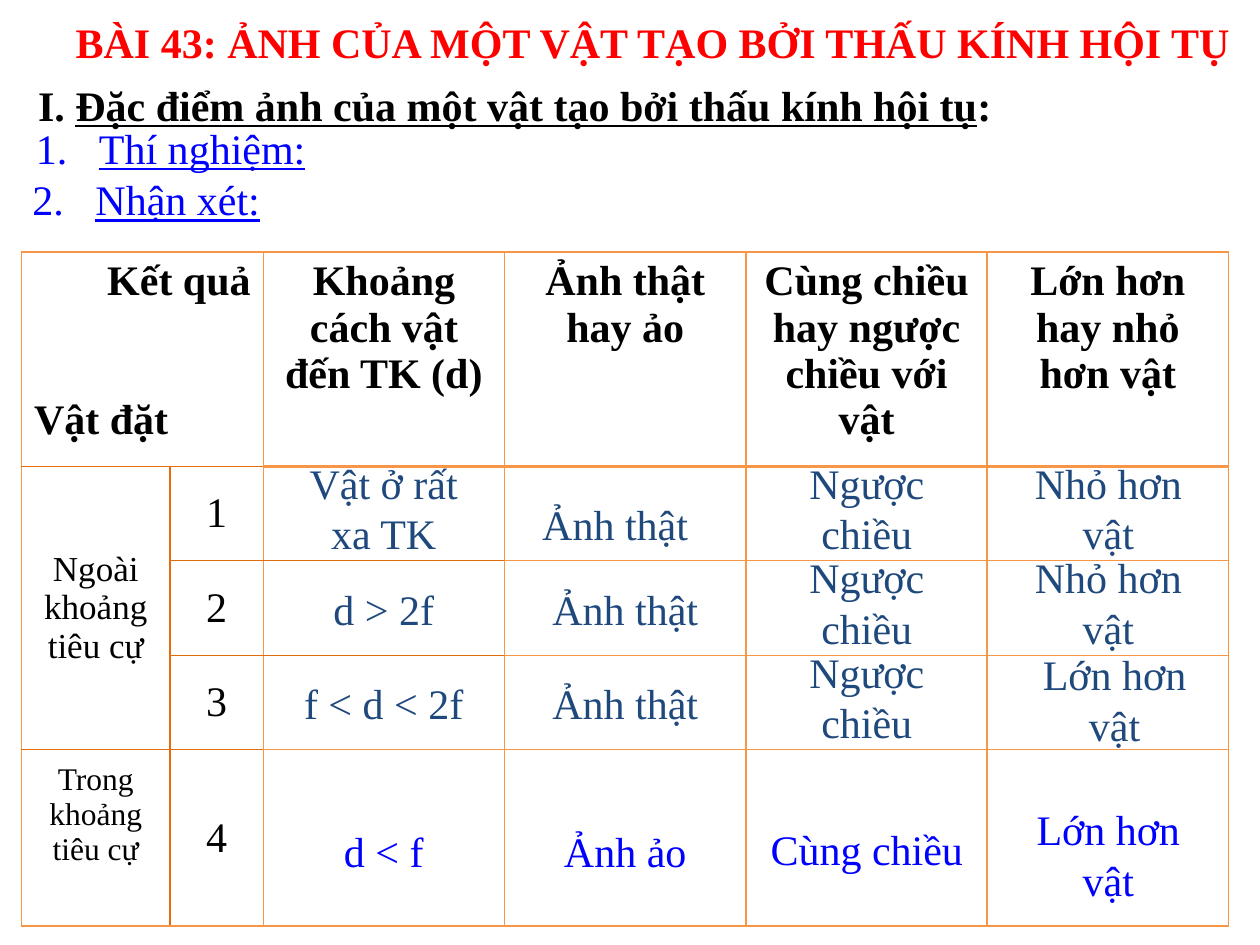
from lxml import etree
from pptx import Presentation, util as u
from pptx.dml.color import RGBColor
from pptx.enum import text
from pptx.oxml import ns

FONT = "Times New Roman"
BLACK, RED, BLUE, NAVY = "000000", "FF0000", "0000FF", "1F497D"
ORANGE, DARK_ORANGE = "F79646", "E46C0A"
LEFT, CENTER, RIGHT = text.PP_ALIGN.LEFT, text.PP_ALIGN.CENTER, text.PP_ALIGN.RIGHT

COLUMN_WIDTHS = [1.18, 0.74] + [1.915] * 4
ROW_HEIGHTS = [1.7, 0.75, 0.75, 0.75, 1.4]
HEADERS = ["Khoảng cách vật đến TK (d)", "Ảnh thật hay ảo",
           "Cùng chiều hay ngược chiều với vật", "Lớn hơn hay nhỏ hơn vật"]
ANSWER_LEFT, ANSWER_STEP, ANSWER_WIDTH = 2.17, 1.917, 1.75
ANSWERS = [
    (3.58, NAVY, [("Vật ở rất xa TK", 0, 0), ("Ảnh thật", -0.08, 0.33),
                  ("Ngược chiều", 0, 0), ("Nhỏ hơn vật", 0, 0)]),
    (4.33, NAVY, [("d > 2f", 0, 0.25), ("Ảnh thật", 0, 0.25),
                  ("Ngược chiều", 0, 0), ("Nhỏ hơn vật", 0, 0)]),
    (5.08, NAVY, [("f < d < 2f", 0, 0.25), ("Ảnh thật", 0, 0.25),
                  ("Ngược chiều", 0, 0), ("Lớn hơn vật", 0.05, 0.02)]),
    (6.33, BLUE, [("d < f", 0, 0.17), ("Ảnh ảo", 0, 0.17),
                  ("Cùng chiều", 0, 0.16), ("Lớn hơn vật", 0, 0)]),
]


def color(value):
    """Turn a hex string into a colour."""
    return RGBColor.from_string(value)


def add_span(para, words, tint=BLACK, size=24, bold=False, underline=False):
    """Append one formatted run to a paragraph."""
    span = para.add_run()
    span.text = words
    font = span.font
    font.name, font.size, font.bold, font.underline = FONT, u.Pt(size), bold, underline
    font.color.rgb = color(tint)


def prepare(box, left, top, width, height, align=CENTER, wrap=False):
    """Place a text shape and return its first paragraph."""
    box.left, box.top, box.width, box.height = map(u.Inches, (left, top, width, height))
    frame = box.text_frame
    frame.word_wrap = wrap
    frame.auto_size = text.MSO_AUTO_SIZE.SHAPE_TO_FIT_TEXT
    frame.vertical_anchor = text.MSO_ANCHOR.TOP
    para = frame.paragraphs[0]
    para.alignment = align
    para.space_before = u.Pt(0)
    return para


def number(para, start):
    """Give a paragraph an automatic number and a hanging indent."""
    properties = para._p.get_or_add_pPr()
    properties.set("marL", str(u.Inches(0.5)))
    properties.set("indent", str(u.Inches(-0.5)))
    face = etree.SubElement(properties, ns.qn("a:buFont"))
    face.set("typeface", FONT)
    bullet = etree.SubElement(properties, ns.qn("a:buAutoNum"))
    bullet.set("type", "arabicPeriod")
    if start > 1:
        bullet.set("startAt", str(start))


def add_headings(page):
    """Fill the title, the section heading and the two numbered items."""
    title, first, second = page.placeholders
    para = prepare(title, 0.5, 0.08, 9.45, 0.5, LEFT)
    add_span(para, "BÀI 43: ẢNH CỦA MỘT VẬT TẠO BỞI THẤU KÍNH HỘI TỤ", RED, bold=True)
    para = prepare(page.shapes.add_textbox(0, 0, 0, 0), 0.2, 0.58, 7.77, 0.5)
    add_span(para, "I. ", bold=True)
    add_span(para, "Đặc điểm ảnh của một vật tạo bởi thấu kính hội tụ", bold=True, underline=True)
    add_span(para, ":", bold=True)
    items = [(first, "Thí nghiệm:", 0.13, 0.92, 2.45), (second, "Nhận xét:", 0.15, 1.33, 2.02)]
    for start, (box, words, left, top, width) in enumerate(items, 1):
        para = prepare(box, left, top, width, 0.51)
        number(para, start)
        add_span(para, words, BLUE, underline=True)


def draw_edge(cell, tag, tint, weight):
    """Draw one border of a cell."""
    line = etree.SubElement(cell._tc.get_or_add_tcPr(), ns.qn(tag), w=str(u.Pt(weight)))
    fill = etree.SubElement(line, ns.qn("a:solidFill"))
    etree.SubElement(fill, ns.qn("a:srgbClr"), val=tint)


def horizontal(line, column):
    """Give colour and weight of a horizontal grid line in a column."""
    dark = (column < 2 and 0 < line < 5) or (column == 2 and line in (2, 3))
    return DARK_ORANGE if dark else ORANGE, 2 if line == 1 and column >= 2 else 1


def vertical(line, row):
    """Give colour and weight of a vertical grid line in a row."""
    return DARK_ORANGE if line == 1 and row > 0 else ORANGE, 1


def style_cell(cell, row, column):
    """Draw the borders of a cell and leave it unfilled."""
    draw_edge(cell, "a:lnL", *vertical(column, row))
    draw_edge(cell, "a:lnR", *vertical(column + 1, row))
    draw_edge(cell, "a:lnT", *horizontal(row, column))
    draw_edge(cell, "a:lnB", *horizontal(row + 1, column))
    cell.fill.background()


def write_cell(cell, words, size=24, bold=False, middle=True):
    """Write centred text into a cell."""
    cell.vertical_anchor = text.MSO_ANCHOR.MIDDLE if middle else text.MSO_ANCHOR.TOP
    para = cell.text_frame.paragraphs[0]
    para.alignment = CENTER
    add_span(para, words, size=size, bold=bold)


def add_results_table(page):
    """Add the ruled table with its headers and row labels."""
    frame = page.shapes.add_table(5, 6, u.Inches(0.17), u.Inches(2),
                                  u.Inches(sum(COLUMN_WIDTHS)), u.Inches(sum(ROW_HEIGHTS)))
    table = frame.table
    table.first_row = table.horz_banding = False
    for column, width in zip(table.columns, COLUMN_WIDTHS):
        column.width = u.Inches(width)
    for row, height in zip(table.rows, ROW_HEIGHTS):
        row.height = u.Inches(height)
    corner, outside, inside = table.cell(0, 0), table.cell(1, 0), table.cell(4, 0)
    corner.merge(table.cell(0, 1))
    outside.merge(table.cell(3, 0))
    for row in range(5):
        for column in range(6):
            cell = table.cell(row, column)
            if not cell.is_spanned:
                style_cell(cell, row, column)
    para = corner.text_frame.paragraphs[0]
    para.alignment = RIGHT
    add_span(para, "Kết quả", bold=True)
    para = corner.text_frame.add_paragraph()
    para.alignment, para.space_before = LEFT, u.Pt(53)
    add_span(para, "Vật đặt", bold=True)
    for column, words in enumerate(HEADERS, 2):
        write_cell(table.cell(0, column), words, bold=True, middle=False)
    for row in range(1, 5):
        write_cell(table.cell(row, 1), str(row))
    write_cell(outside, "Ngoài khoảng tiêu cự", size=20)
    write_cell(inside, "Trong khoảng tiêu cự", size=18)
    inside.margin_bottom = u.Inches(0.42)


def add_answers(page):
    """Lay the answers over the empty cells of the table."""
    for top, tint, answers in ANSWERS:
        for column, (words, shift, drop) in enumerate(answers):
            left = ANSWER_LEFT + column * ANSWER_STEP + shift
            height = 0.51 if drop > 0.1 else 0.91
            box = page.shapes.add_textbox(0, 0, 0, 0)
            para = prepare(box, left, top + drop, ANSWER_WIDTH, height, wrap=True)
            add_span(para, words, tint)


def main():
    """Build the lesson slide and save it."""
    deck = Presentation()
    deck.slide_width, deck.slide_height = u.Inches(10), u.Inches(7.5)
    page = deck.slides.add_slide(deck.slide_layouts[3])
    add_headings(page)
    add_results_table(page)
    add_answers(page)
    deck.save("out.pptx")


if __name__ == "__main__":
    main()
